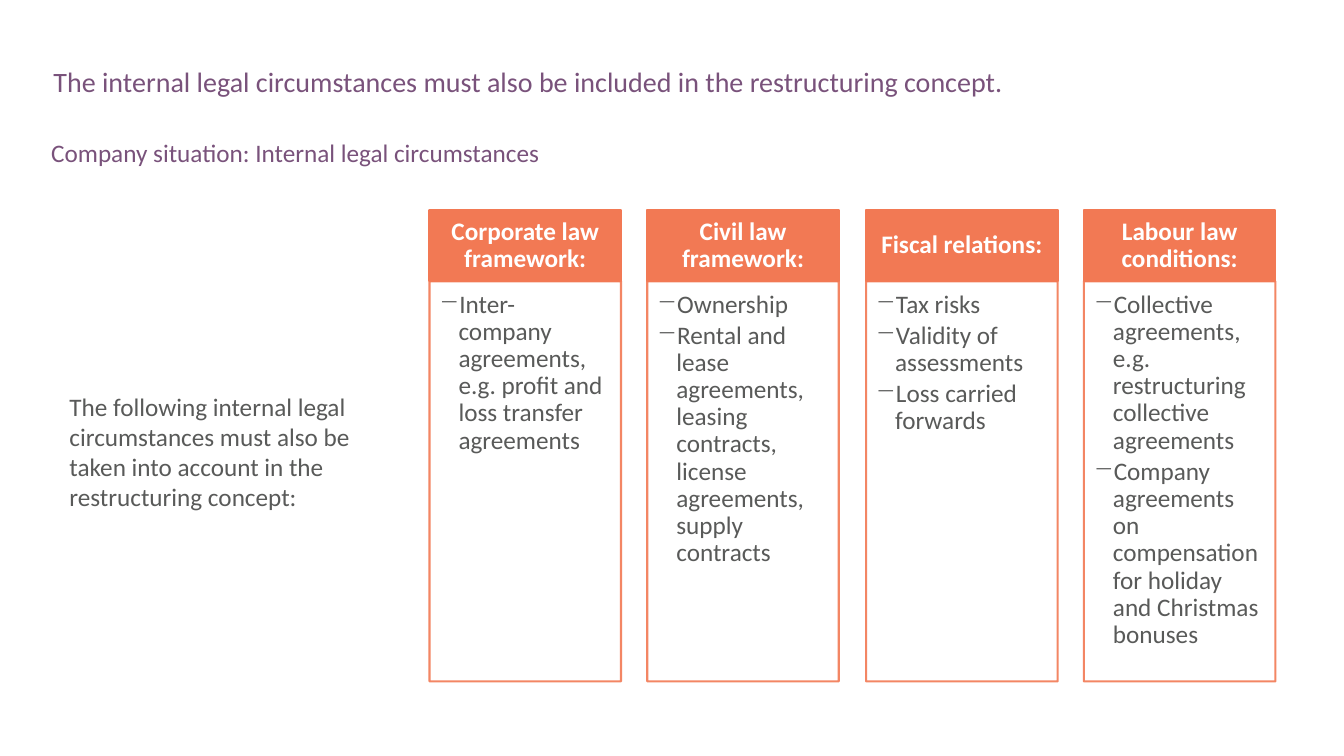
from lxml.etree import SubElement
from pptx import Presentation
from pptx.dml.color import RGBColor
from pptx.enum.shapes import MSO_SHAPE as Shape
from pptx.enum.text import MSO_ANCHOR as Anchor, MSO_AUTO_SIZE as AutoSize, PP_ALIGN as Align
from pptx.oxml.ns import qn
from pptx.util import Pt

EMU_PER_PX = 9144
PURPLE, ORANGE, GREY, WHITE = "79527B", "F27954", "595A59", "FFFFFF"
COLUMNS = [
    ("Corporate law framework:",
     ["Inter-\vcompany agreements, e.g. profit and loss transfer agreements"]),
    ("Civil law framework:",
     ["Ownership",
      "Rental and lease agreements, leasing contracts, license agreements, supply contracts"]),
    ("Fiscal relations:",
     ["Tax risks", "Validity of assessments", "Loss carried forwards"]),
    ("Labour law conditions:",
     ["Collective agreements, e.g. restructuring collective agreements",
      "Company agreements on compensation for holiday and Christmas bonuses"]),
]


def px(length):
    return round(length * EMU_PER_PX)


def rgb(value):
    return RGBColor.from_string(value)


class SlideBuilder:
    """Holds the text style and the current slide, and draws its elements."""

    def __init__(self, deck, font="Calibri"):
        self.font = font
        self.slide = deck.slides.add_slide(deck.slide_layouts[5])

    def fill_text(self, box, paragraphs, size=18, color=GREY, bold=False, align=Align.LEFT,
                  anchor=Anchor.TOP, insets=(10, 5, 10, 5), spacing=0.9, bullet=None):
        frame = box.text_frame
        frame.word_wrap = True
        frame.auto_size = AutoSize.NONE
        frame.vertical_anchor = anchor
        (frame.margin_left, frame.margin_top,
         frame.margin_right, frame.margin_bottom) = map(px, insets)
        for index, text in enumerate(paragraphs):
            para = frame.add_paragraph() if index else frame.paragraphs[0]
            para.text = text
            if bullet:
                self.add_bullet(para, bullet, color)
            para.alignment = align
            para.line_spacing = spacing
            para.space_before = Pt(2.7 if index else 0)
            for span in para.runs:
                span.font.name = self.font
                span.font.size = Pt(size)
                span.font.bold = bold
                span.font.color.rgb = rgb(color)

    def add_bullet(self, para, symbol, color):
        para.level = 1
        properties = para._p.get_or_add_pPr()
        properties.set("marL", str(px(19)))
        properties.set("indent", str(px(-19)))
        bullet_color = SubElement(properties, qn("a:buClr"))
        SubElement(bullet_color, qn("a:srgbClr"), val=color)
        SubElement(properties, qn("a:buChar"), char=symbol)

    def title(self, area, text, **style):
        box = self.slide.shapes.title
        box.left, box.top, box.width, box.height = map(px, area)
        self.fill_text(box, [text], **style)

    def text(self, area, text, **style):
        box = self.slide.shapes.add_textbox(*map(px, area))
        self.fill_text(box, [text], **style)

    def panel(self, area, paragraphs, fill=None, line=ORANGE, opacity=100, **style):
        box = self.slide.shapes.add_shape(Shape.RECTANGLE, *map(px, area))
        box.shadow.inherit = False
        if fill:
            box.fill.solid()
            box.fill.fore_color.rgb = rgb(fill)
        else:
            box.fill.background()
        box.line.color.rgb = rgb(line)
        box.line.width = Pt(1.5)
        if opacity < 100:
            line_color = box.line._ln.find(".//" + qn("a:srgbClr"))
            SubElement(line_color, qn("a:alpha"), val=str(opacity * 1000))
        self.fill_text(box, paragraphs, **style)


def main():
    deck = Presentation()
    deck.slide_width, deck.slide_height = px(1333), px(750)
    page = SlideBuilder(deck)
    page.title((43, 63, 1254, 64),
               "The internal legal circumstances must also be included in the restructuring concept.",
               size=20, color=PURPLE)
    page.text((41, 135, 1256, 28), "Company situation: Internal legal circumstances", color=PURPLE)
    for index, (heading, points) in enumerate(COLUMNS):
        left = round(426 + index * 649 / 3)
        page.panel((left, 208, 190, 71), [heading], fill=ORANGE, color=WHITE, bold=True,
                   align=Align.CENTER, anchor=Anchor.MIDDLE, insets=(14, 8, 14, 8))
        page.panel((left, 279, 190, 397), points, opacity=90, bullet="−",
                   insets=(10, 10, 14, 16))
    page.text((59, 196, 349, 504),
              "The following internal legal circumstances must also be taken into account "
              "in the restructuring concept:", anchor=Anchor.MIDDLE, spacing=1.0)
    deck.save("out.pptx")


if __name__ == "__main__":
    main()
